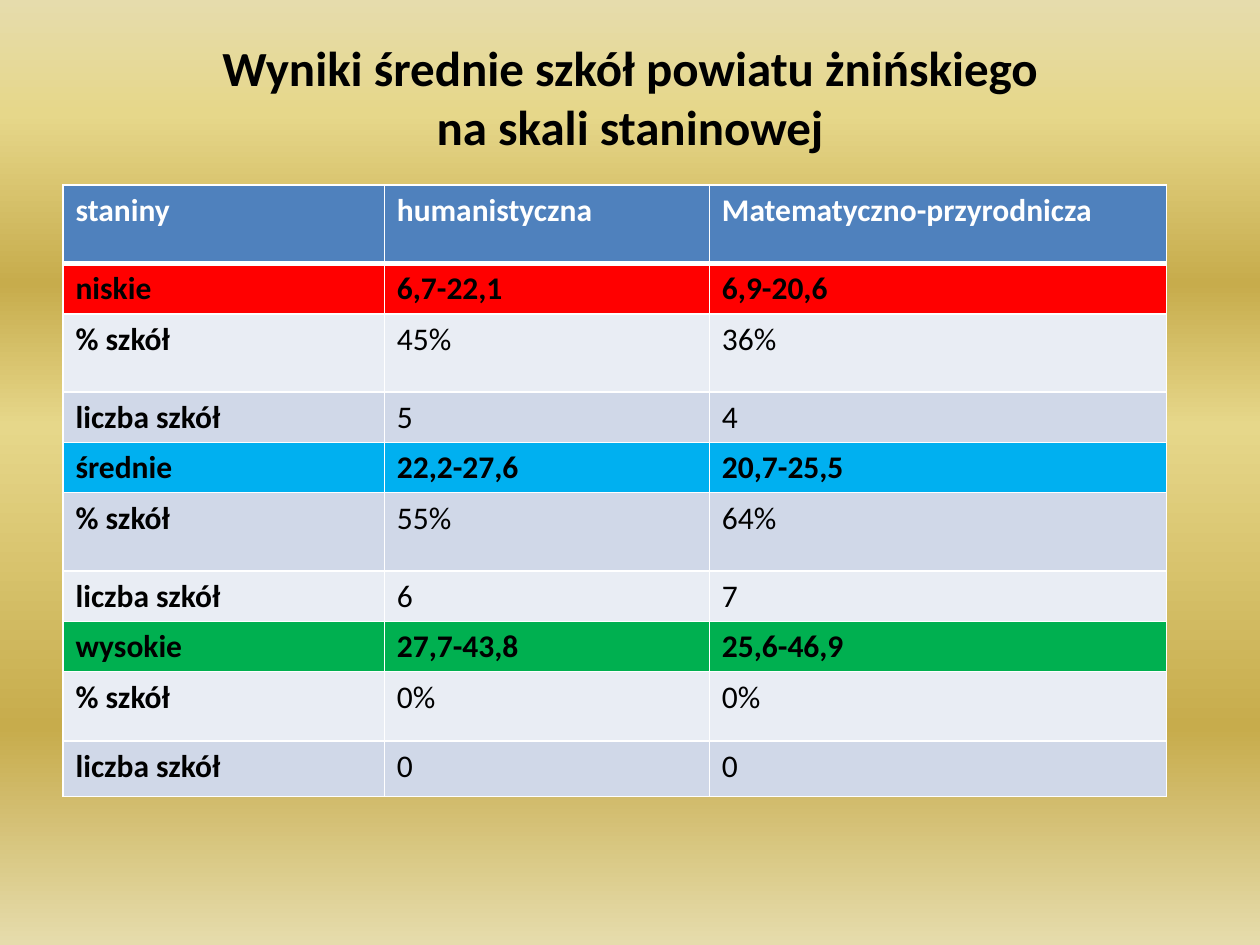
from dataclasses import dataclass
from lxml.etree import SubElement as Sub
from pptx import Presentation
from pptx.dml.color import RGBColor as RGB
from pptx.enum.text import MSO_ANCHOR as Anchor, PP_ALIGN as Align
from pptx.oxml.ns import qn
from pptx.slide import Slide
from pptx.table import Table
from pptx.util import Inches, Pt


@dataclass(frozen=True)
class Theme:
    font: str = "Calibri"
    title: int = 28
    body: int = 18
    black: str = "000000"
    white: str = "FFFFFF"
    head: str = "4F81BD"
    bands: tuple[str, str] = ("E9EDF4", "D0D8E8")
    stops: tuple[tuple[int, str], ...] = (
        (0, "E6DCAC"), (12, "E6D78A"), (30, "C7AC4C"),
        (45, "E6D78A"), (77, "C7AC4C"), (100, "E6DCAC"))


@dataclass(frozen=True)
class Level:
    name: str
    fill: str
    spans: tuple[str, str]
    shares: tuple[str, str]
    counts: tuple[str, str]


@dataclass(frozen=True)
class Row:
    texts: tuple[str, ...]
    fill: str
    color: str = "000000"
    bold: bool = True
    line: int = 1


THEME = Theme()
TITLE = "Wyniki średnie szkół powiatu żnińskiego\vna skali staninowej"
HEADS = ("staniny", "humanistyczna", "Matematyczno-przyrodnicza")
LEVELS = (
    Level("niskie", "FF0000", ("6,7-22,1", "6,9-20,6"), ("45%", "36%"), ("5", "4")),
    Level("średnie", "00B0F0", ("22,2-27,6", "20,7-25,5"), ("55%", "64%"), ("6", "7")),
    Level("wysokie", "00B050", ("27,7-43,8", "25,6-46,9"), ("0%", "0%"), ("0", "0")),
)
WIDTHS = (2.55, 2.58, 3.63)
HEIGHTS = (0.62, 0.4, 0.62, 0.4, 0.4, 0.62, 0.4, 0.4, 0.55, 0.44)


def paint_back(slide: Slide) -> None:
    fill = slide.background.fill
    fill.gradient()
    fill.gradient_angle = 270
    stops = slide.background._cSld.find(".//" + qn("a:gsLst"))
    for stop in list(stops):
        stops.remove(stop)
    for place, color in THEME.stops:
        stop = Sub(stops, qn("a:gs"), pos=str(place * 1000))
        Sub(stop, qn("a:srgbClr"), val=color)


def style_text(frame, size: int, color: str, bold: bool) -> None:
    for para in frame.paragraphs:
        for run in para.runs:
            font = run.font
            font.name, font.size, font.bold = THEME.font, Pt(size), bold
            font.color.rgb = RGB.from_string(color)


def add_title(slide: Slide) -> None:
    box = slide.shapes.add_textbox(Inches(0.5), Inches(0.3), Inches(9), Inches(0.93))
    frame = box.text_frame
    frame.word_wrap = True
    frame.vertical_anchor = Anchor.MIDDLE
    frame.text = TITLE
    frame.paragraphs[0].alignment = Align.CENTER
    style_text(frame, THEME.title, THEME.black, True)


def add_edges(cell, base: int) -> None:
    props = cell._tc.get_or_add_tcPr()
    for side, width in (("L", 1), ("R", 1), ("T", 1), ("B", base)):
        edge = Sub(props, qn(f"a:ln{side}"), w=str(Pt(width)))
        Sub(Sub(edge, qn("a:solidFill")), qn("a:srgbClr"), val=THEME.white)


def list_rows() -> list[Row]:
    rows = [Row(HEADS, THEME.head, THEME.white, line=3)]
    for level in LEVELS:
        rows.append(Row((level.name, *level.spans), level.fill))
        for label, pair in (("% szkół", level.shares), ("liczba szkół", level.counts)):
            rows.append(Row((label, *pair), THEME.bands[len(rows) % 2], bold=False))
    return rows


def fill_row(table: Table, index: int, row: Row) -> None:
    for col, text in enumerate(row.texts):
        cell = table.cell(index, col)
        add_edges(cell, row.line)
        cell.fill.solid()
        cell.fill.fore_color.rgb = RGB.from_string(row.fill)
        cell.text_frame.text = text
        style_text(cell.text_frame, THEME.body, row.color, row.bold or col == 0)


def add_grid(slide: Slide) -> None:
    frame = slide.shapes.add_table(
        len(HEIGHTS), len(WIDTHS), Inches(0.5), Inches(1.47),
        Inches(sum(WIDTHS)), Inches(sum(HEIGHTS)))
    table = frame.table
    for col, width in zip(table.columns, WIDTHS):
        col.width = Inches(width)
    for line, height in zip(table.rows, HEIGHTS):
        line.height = Inches(height)
    for index, row in enumerate(list_rows()):
        fill_row(table, index, row)


def main() -> None:
    deck = Presentation()
    deck.slide_width, deck.slide_height = Inches(10), Inches(7.5)
    slide = deck.slides.add_slide(deck.slide_layouts[6])
    paint_back(slide)
    add_title(slide)
    add_grid(slide)
    deck.save("out.pptx")


if __name__ == "__main__":
    main()
